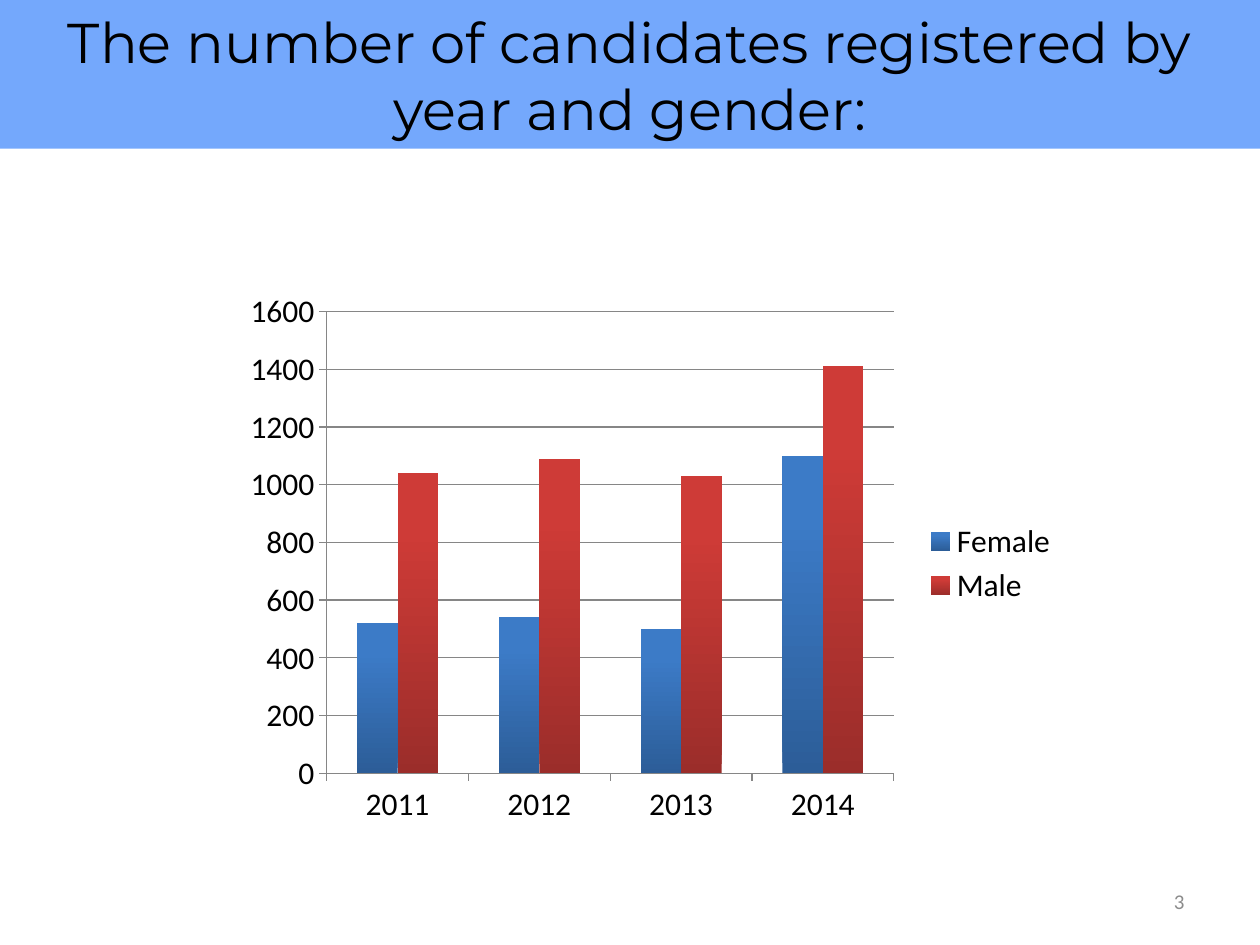
import dataclasses
from typing import Any

import pptx
import pptx.chart.chart
import pptx.chart.data
import pptx.dml.color
import pptx.enum.chart
import pptx.enum.text
import pptx.oxml
import pptx.oxml.ns
import pptx.slide
import pptx.util

Pt = pptx.util.Pt
RGBColor = pptx.dml.color.RGBColor

BLACK = RGBColor(0x00, 0x00, 0x00)
GRAY = RGBColor(0x8C, 0x8C, 0x8C)
AXIS_GRAY = RGBColor(0x86, 0x86, 0x86)
BANNER_BLUE = RGBColor(0x74, 0xA8, 0xFC)
FEMALE_TOP = RGBColor(0x3C, 0x7B, 0xC7)
FEMALE_BOTTOM = RGBColor(0x2C, 0x5D, 0x98)
MALE_TOP = RGBColor(0xCE, 0x3B, 0x37)
MALE_BOTTOM = RGBColor(0x9B, 0x2D, 0x2A)

YEARS = ("2011", "2012", "2013", "2014")
PLOT_LAYOUT = {"x": 0.114, "y": 0.05, "w": 0.675, "h": 0.825}


@dataclasses.dataclass(frozen=True)
class GenderSeries:
    name: str
    values: tuple[int, ...]
    top: RGBColor
    bottom: RGBColor


@dataclasses.dataclass(frozen=True)
class TextStyle:
    font: str
    size: float
    color: RGBColor
    alignment: Any


GENDERS = (
    GenderSeries("Female", (520, 540, 500, 1100), FEMALE_TOP, FEMALE_BOTTOM),
    GenderSeries("Male", (1040, 1090, 1030, 1410), MALE_TOP, MALE_BOTTOM),
)
TITLE_STYLE = TextStyle("Montserrat", 32, BLACK, pptx.enum.text.PP_ALIGN.CENTER)
NUMBER_STYLE = TextStyle("Calibri", 12, GRAY, pptx.enum.text.PP_ALIGN.RIGHT)


def set_format(target: Any, values: dict[str, Any]) -> None:
    for name, value in values.items():
        setattr(target, name, value)


def set_font(font: Any, name: str, size: float, color: RGBColor) -> None:
    set_format(font, {"name": name, "size": Pt(size), "bold": False})
    font.color.rgb = color


def write_text(shape: Any, text: str, style: TextStyle) -> None:
    frame = shape.text_frame
    set_format(frame, {
        "word_wrap": True,
        "auto_size": pptx.enum.text.MSO_AUTO_SIZE.NONE,
        "vertical_anchor": pptx.enum.text.MSO_ANCHOR.MIDDLE,
    })
    paragraph = frame.paragraphs[0]
    paragraph.alignment = style.alignment
    run = paragraph.add_run()
    run.text = text
    set_font(run.font, style.font, style.size, style.color)


def add_title(slide: pptx.slide.Slide) -> None:
    title = slide.shapes.title
    set_format(title, {"left": Pt(0), "top": Pt(0), "width": Pt(720), "height": Pt(85)})
    title.fill.solid()
    title.fill.fore_color.rgb = BANNER_BLUE
    write_text(title, "The number of candidates registered by year and gender:", TITLE_STYLE)


def place_plot(chart: pptx.chart.chart.Chart) -> None:
    settings = {"layoutTarget": "inner", "xMode": "edge", "yMode": "edge", **PLOT_LAYOUT}
    children = "".join(f'<c:{name} val="{value}"/>' for name, value in settings.items())
    layout = pptx.oxml.parse_xml(
        f'<c:layout {pptx.oxml.ns.nsdecls("c")}>'
        f"<c:manualLayout>{children}</c:manualLayout></c:layout>"
    )
    plot_area = chart.plots[0]._element.getparent()
    for existing in plot_area.findall(pptx.oxml.ns.qn("c:layout")):
        plot_area.remove(existing)
    plot_area.insert(0, layout)


def fill_bars(series: Any, gender: GenderSeries) -> None:
    fill = series.format.fill
    fill.gradient()
    fill.gradient_angle = 90
    stops = ((0, gender.bottom), (0.8, gender.top))
    for stop, (position, color) in zip(fill.gradient_stops, stops):
        stop.position = position
        stop.color.rgb = color
    series.invert_if_negative = False


def add_candidates_chart(slide: pptx.slide.Slide) -> None:
    data = pptx.chart.data.CategoryChartData()
    data.categories = YEARS
    for gender in GENDERS:
        data.add_series(gender.name, gender.values)
    chart = slide.shapes.add_chart(
        pptx.enum.chart.XL_CHART_TYPE.COLUMN_CLUSTERED,
        Pt(132), Pt(162), Pt(480), Pt(320), data,
    ).chart
    set_format(chart, {"has_title": False, "has_legend": True})
    set_font(chart.font, "Calibri", 18, BLACK)
    set_format(chart.legend, {
        "position": pptx.enum.chart.XL_LEGEND_POSITION.RIGHT,
        "include_in_layout": False,
    })
    plot = chart.plots[0]
    set_format(plot, {"gap_width": 150, "overlap": 0, "vary_by_categories": False})
    for series, gender in zip(plot.series, GENDERS):
        fill_bars(series, gender)
    value_axis = chart.value_axis
    set_format(value_axis, {
        "minimum_scale": 0, "maximum_scale": 1600, "major_unit": 200,
        "has_major_gridlines": True,
    })
    for axis in (chart.category_axis, value_axis):
        axis.major_tick_mark = pptx.enum.chart.XL_TICK_MARK.OUTSIDE
    for item in (chart.category_axis, value_axis, value_axis.major_gridlines):
        item.format.line.color.rgb = AXIS_GRAY
        item.format.line.width = Pt(0.75)
    place_plot(chart)


def add_slide_number(slide: pptx.slide.Slide) -> None:
    number = slide.shapes.add_textbox(Pt(516), Pt(500.5), Pt(168), Pt(28.75))
    write_text(number, "3", NUMBER_STYLE)


def main() -> None:
    presentation = pptx.Presentation()
    set_format(presentation, {"slide_width": Pt(720), "slide_height": Pt(540)})
    slide = presentation.slides.add_slide(presentation.slide_layouts[5])
    add_title(slide)
    add_candidates_chart(slide)
    add_slide_number(slide)
    presentation.save("out.pptx")


if __name__ == "__main__":
    main()
